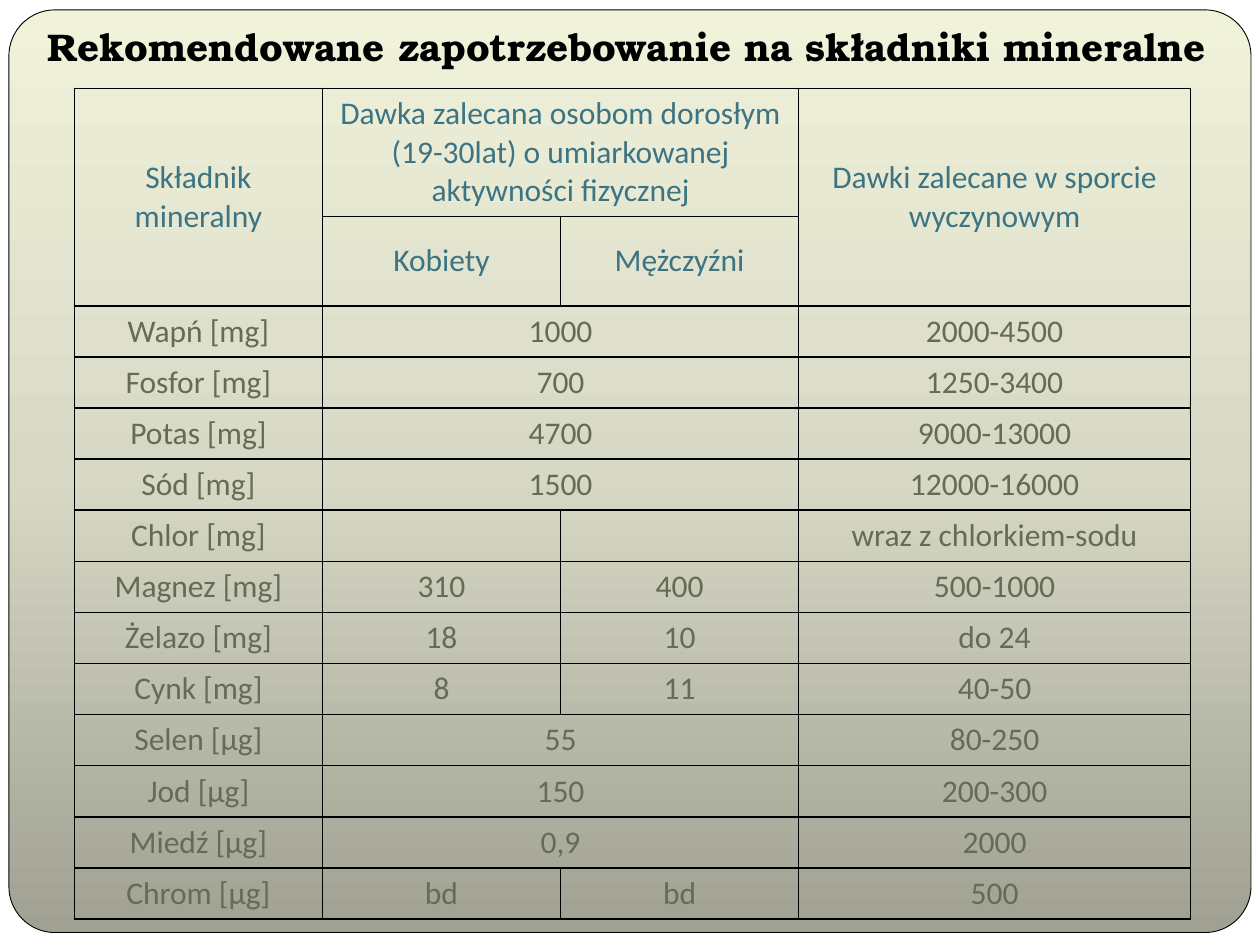
from copy import deepcopy

from lxml.etree import SubElement
from pptx import Presentation
from pptx.dml.color import RGBColor
from pptx.enum.shapes import MSO_SHAPE
from pptx.enum.text import MSO_ANCHOR, PP_ALIGN
from pptx.oxml.ns import qn
from pptx.util import Cm, Pt

BLACK = RGBColor(0x00, 0x00, 0x00)
WHITE = RGBColor(0xFF, 0xFF, 0xFF)
HEADER_TEXT = RGBColor(0x3C, 0x74, 0x83)
BODY_TEXT = RGBColor(0x67, 0x6A, 0x55)
CARD_STOPS = [
    (0, RGBColor(0xA0, 0xA1, 0x92)),
    (0.5, RGBColor(0xD7, 0xD9, 0xC6)),
    (1, RGBColor(0xF0, 0xF2, 0xDA)),
]

TITLE = "Rekomendowane zapotrzebowanie na składniki mineralne"
HEADER_ROWS = 2
# None marks a cell covered by the merged cell to its left or above it.
ROWS = [
    ("Składnik mineralny",
     "Dawka zalecana osobom dorosłym (19-30lat) o umiarkowanej aktywności fizycznej",
     None, "Dawki zalecane w sporcie wyczynowym"),
    (None, "Kobiety", "Mężczyźni", None),
    ("Wapń [mg]", "1000", None, "2000-4500"),
    ("Fosfor [mg]", "700", None, "1250-3400"),
    ("Potas [mg]", "4700", None, "9000-13000"),
    ("Sód [mg]", "1500", None, "12000-16000"),
    ("Chlor [mg]", "", "", "wraz z chlorkiem-sodu"),
    ("Magnez [mg]", "310", "400", "500-1000"),
    ("Żelazo [mg]", "18", "10", "do 24"),
    ("Cynk [mg]", "8", "11", "40-50"),
    ("Selen [µg]", "55", None, "80-250"),
    ("Jod [µg]", "150", None, "200-300"),
    ("Miedź [µg]", "0,9", None, "2000"),
    ("Chrom [µg]", "bd", "bd", "500"),
]
COLUMN_WIDTHS = [Cm(5), Cm(4.8), Cm(4.8), Cm(7.9)]
ROW_HEIGHTS = [Cm(2.54), Cm(1.78)] + [Cm(1.02)] * (len(ROWS) - HEADER_ROWS)


def add_card(slide, left, top, width, height):
    """Place the rounded gradient panel behind everything else."""
    card = slide.shapes.add_shape(MSO_SHAPE.ROUNDED_RECTANGLE, left, top, width, height)
    card.adjustments[0] = 0.05
    card.shadow.inherit = False
    card.line.color.rgb = BLACK
    card.line.width = Pt(0.5)
    card.fill.gradient()
    card.fill.gradient_angle = 90
    stop_list = next(card.element.iter(qn("a:gsLst")))
    stop_list.append(deepcopy(stop_list[-1]))
    for stop, (position, color) in zip(card.fill.gradient_stops, CARD_STOPS):
        stop.position = position
        stop.color.rgb = color
    slide.shapes.element.insert(2, card.element)


def place_title(slide, left, top, width, height):
    title = slide.shapes.title
    title.left, title.top, title.width, title.height = left, top, width, height
    title.text_frame.text = TITLE
    title.text_frame.vertical_anchor = MSO_ANCHOR.TOP
    paragraph = title.text_frame.paragraphs[0]
    paragraph.alignment = PP_ALIGN.LEFT
    font = paragraph.runs[0].font
    font.name, font.size, font.bold = "TeX Gyre Bonum", Pt(22), True
    font.color.rgb = BLACK


def set_borders(cell):
    properties = cell._tc.get_or_add_tcPr()
    for side in ("lnL", "lnR", "lnT", "lnB"):
        line = SubElement(properties, qn(f"a:{side}"), w=str(Pt(1)))
        fill = SubElement(line, qn("a:solidFill"))
        SubElement(fill, qn("a:srgbClr"), val=str(BLACK))


def format_cell(cell, text, color):
    set_borders(cell)
    cell.fill.background()
    cell.vertical_anchor = MSO_ANCHOR.MIDDLE
    cell.text_frame.text = text or ""
    paragraph = cell.text_frame.paragraphs[0]
    paragraph.alignment = PP_ALIGN.CENTER
    for run in paragraph.runs:
        run.font.name, run.font.size = "Calibri", Pt(18)
        run.font.color.rgb = color


def add_mineral_table(slide, left, top):
    table = slide.shapes.add_table(
        len(ROWS), len(COLUMN_WIDTHS), left, top, sum(COLUMN_WIDTHS), sum(ROW_HEIGHTS)
    ).table
    table.first_row = table.horz_banding = False
    for column, width in zip(table.columns, COLUMN_WIDTHS):
        column.width = width
    for row, height in zip(table.rows, ROW_HEIGHTS):
        row.height = height
    for row_index, texts in enumerate(ROWS):
        color = HEADER_TEXT if row_index < HEADER_ROWS else BODY_TEXT
        for column_index, text in enumerate(texts):
            format_cell(table.cell(row_index, column_index), text, color)
        if texts[2] is None:
            table.cell(row_index, 1).merge(table.cell(row_index, 2))
    for column_index in (0, 3):
        table.cell(0, column_index).merge(table.cell(1, column_index))


def main():
    presentation = Presentation()
    presentation.slide_width, presentation.slide_height = Cm(25.4), Cm(19.05)
    slide = presentation.slides.add_slide(presentation.slide_layouts.get_by_name("Title Only"))
    slide.background.fill.solid()
    slide.background.fill.fore_color.rgb = WHITE
    add_card(slide, Cm(0.18), Cm(0.2), Cm(25.04), Cm(18.6))
    place_title(slide, Cm(0.71), Cm(0.33), Cm(24.2), Cm(1.2))
    add_mineral_table(slide, Cm(1.5), Cm(1.78))
    presentation.save("out.pptx")


if __name__ == "__main__":
    main()
